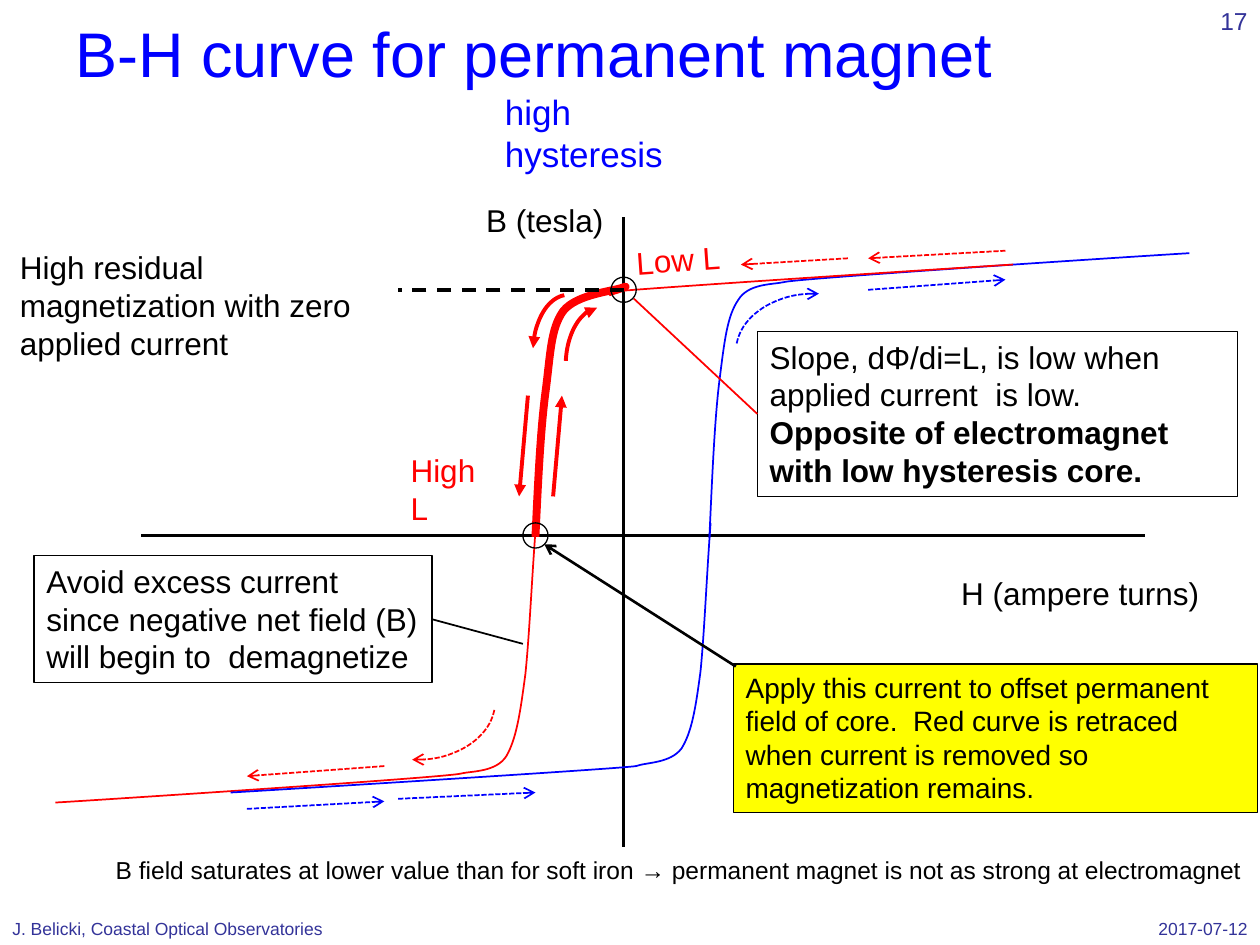
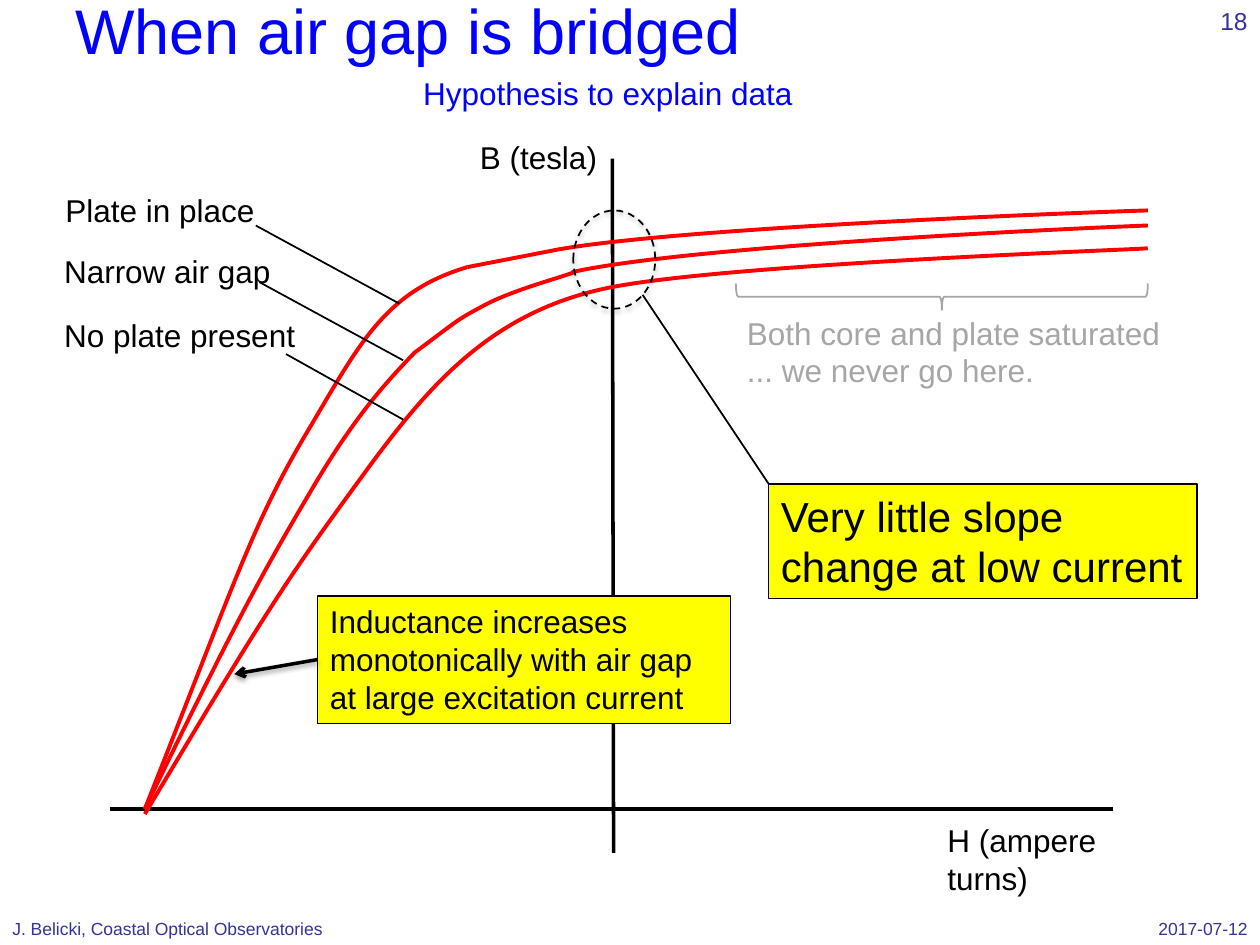
from dataclasses import dataclass

from lxml import etree
from pptx import Presentation
from pptx.dml.color import RGBColor
from pptx.enum.dml import MSO_LINE
from pptx.enum.shapes import MSO_CONNECTOR, MSO_SHAPE
from pptx.enum.text import MSO_ANCHOR, MSO_AUTO_SIZE, PP_ALIGN
from pptx.oxml.ns import qn
from pptx.util import Pt

PX = 9144  # EMU per px, 100 px to the inch
DASH, FINE_DASH = MSO_LINE.DASH, MSO_LINE.SQUARE_DOT
STRAIGHT = MSO_CONNECTOR.STRAIGHT
RECT, OVAL, ARC, BRACE = (MSO_SHAPE.RECTANGLE, MSO_SHAPE.OVAL, MSO_SHAPE.ARC,
                          MSO_SHAPE.RIGHT_BRACE)
LEFT, RIGHT = PP_ALIGN.LEFT, PP_ALIGN.RIGHT
TOP, MIDDLE = MSO_ANCHOR.TOP, MSO_ANCHOR.MIDDLE
LEFT_SIDE, RIGHT_SIDE = 1, 3


@dataclass(frozen=True)
class Theme:
    font: str = "Arial"
    black: str = "000000"
    white: str = "FFFFFF"
    red: str = "FF0000"
    blue: str = "0000FF"
    navy: str = "333399"
    grey: str = "A6A6A6"
    yellow: str = "FFFF00"
    title: int = 36
    callout: int = 24
    subtitle: int = 20
    body: int = 18
    compact: int = 16
    note: int = 14
    footer: int = 10


T = Theme()


def stroke(shape, color, width, dash=None, head=None, tail=None, shadow=False):
    """Style an outline, its arrowheads and its shadow."""
    shape.line.color.rgb = RGBColor.from_string(color)
    shape.line.width = Pt(width)
    if dash:
        shape.line.dash_style = dash
    properties = shape.element.spPr
    outline = properties.find(qn("a:ln"))
    for end, kind in (("a:headEnd", head), ("a:tailEnd", tail)):
        if kind:
            etree.SubElement(outline, qn(end), type=kind)
    effects = etree.SubElement(properties, qn("a:effectLst"))
    if shadow:
        cast = etree.SubElement(effects, qn("a:outerShdw"), blurRad="39370",
                                dist="20320", dir="5400000", rotWithShape="0")
        tint = etree.SubElement(cast, qn("a:srgbClr"), val=T.black)
        etree.SubElement(tint, qn("a:alpha"), val="37000")


def write(slide, at, text, size=T.body, color=T.black, align=LEFT, anchor=TOP,
          grow=True, framed=False, fill=None):
    """Place text, in a framed rectangle if asked; return its shape."""
    frame = [value * PX for value in at]
    if framed:
        shape = slide.shapes.add_shape(RECT, *frame)
        stroke(shape, T.black, 0.75)
    else:
        shape = slide.shapes.add_textbox(*frame)
    if fill:
        shape.fill.solid()
        shape.fill.fore_color.rgb = RGBColor.from_string(fill)
    else:
        shape.fill.background()
    body = shape.text_frame
    body.word_wrap = True
    body.auto_size = MSO_AUTO_SIZE.SHAPE_TO_FIT_TEXT if grow else MSO_AUTO_SIZE.NONE
    body.vertical_anchor = anchor
    paragraph = body.paragraphs[0]
    paragraph.text = text
    paragraph.alignment = align
    paragraph.font.name = T.font
    paragraph.font.size = Pt(size)
    paragraph.font.color.rgb = RGBColor.from_string(color)
    return shape


prs = Presentation()
prs.slide_width, prs.slide_height = 1000 * PX, 750 * PX
magnet, gap = (prs.slides.add_slide(prs.slide_layouts[6]) for _ in range(2))

# Titles and footers
for slide, number, title, title_at in (
    (magnet, "17", "B-H curve for permanent magnet", (50, -2, 900, 87)),
    (gap, "18", "When air gap is bridged", (50, -15, 900, 77)),
):
    write(slide, title_at, title, T.title, T.blue, anchor=MIDDLE, grow=False)
    write(slide, (777, 724, 223, 25), "2017-07-12", T.footer, T.navy, RIGHT, grow=False)
    write(slide, (0, 724, 317, 25), "J. Belicki, Coastal Optical Observatories",
          T.footer, T.navy, grow=False)
    write(slide, (792, 0, 208, 42), number, T.note, T.navy, RIGHT, grow=False)

# Axes
for slide, start, end in (
    (magnet, (112, 425), (909, 425)),
    (magnet, (495, 672), (495, 172)),
    (gap, (87, 642), (883, 642)),
    (gap, (487, 677), (486, 126)),
):
    axis = slide.shapes.add_connector(STRAIGHT, *[v * PX for v in start + end])
    stroke(axis, T.black, 2)

# Magnetization curves: a start point, then two controls and an end per Bezier piece
for slide, color, width, start, points in (
    (magnet, T.red, 4.5, (483, 232), [
        (484, 232), (502, 226), (495, 228), (489, 231), (458, 233), (447, 247),
        (437, 261), (437, 281), (433, 311), (429, 341), (427, 384), (425, 426)]),
    (magnet, T.blue, 1, (944, 201), [
        (941, 201), (630, 221), (622, 224), (613, 226), (594, 225), (586, 238),
        (577, 251), (575, 271), (571, 302), (567, 334), (565, 385), (563, 427)]),
    (magnet, T.red, 1, (44, 637), [
        (47, 637), (357, 617), (366, 614), (374, 612), (394, 613), (402, 600),
        (410, 586), (413, 565), (417, 535), (420, 506), (422, 462), (425, 421)]),
    (magnet, T.blue, 1, (183, 629), [
        (185, 629), (496, 610), (505, 608), (513, 605), (532, 606), (541, 594),
        (549, 581), (552, 563), (556, 533), (559, 503), (561, 455), (564, 415)]),
    (magnet, T.red, 1, (804, 210), [
        (802, 210), (491, 230), (482, 232), (474, 235), (455, 234), (446, 247),
        (438, 260), (435, 281), (432, 311), (428, 341), (426, 384), (423, 426)]),
    (gap, T.red, 2.25, (911, 197), [
        (907, 198), (582, 209), (485, 228), (389, 247), (339, 307), (286, 380),
        (232, 454), (217, 475), (115, 646)]),
    (gap, T.red, 2.25, (456, 216), [
        (443, 221), (408, 230), (385, 242), (361, 255), (368, 251), (329, 280),
        (306, 304), (281, 331), (246, 391), (210, 452), (187, 493), (115, 642)]),
    (gap, T.red, 2.25, (911, 179), [(907, 179), (558, 193), (454, 216)]),
    (gap, T.red, 2.25, (911, 167), [(907, 167), (550, 179), (443, 198)]),
    (gap, T.red, 2.25, (371, 212), [
        (304, 232), (285, 274), (242, 346), (200, 417), (185, 466), (115, 642)]),
):
    outline = slide.shapes.build_freeform(start[0] * PX, start[1] * PX)
    outline.add_line_segments([(x * PX, y * PX) for x, y in points], close=False)
    curve = outline.convert_to_shape()
    legs = list(curve.element.iter(qn("a:lnTo")))
    for first in range(0, len(legs), 3):
        bezier = etree.SubElement(legs[first].getparent(), qn("a:cubicBezTo"))
        for leg in legs[first:first + 3]:
            bezier.append(leg[0])
            leg.getparent().remove(leg)
    curve.fill.background()
    stroke(curve, color, width)

# Labels
for slide, at, text, size, color in (
    (magnet, (391, 67, 196, 44), "high hysteresis", T.subtitle, T.blue),
    (magnet, (376, 155, 208, 40), "B (tesla)", T.body, T.black),
    (magnet, (753, 451, 247, 40), "H (ampere turns)", T.body, T.black),
    (magnet, (316, 353, 91, 40), "High L", T.body, T.red),
    (magnet, (6, 192, 310, 71),
     "High residual magnetization with zero applied current", T.body, T.black),
    (magnet, (82, 674, 918, 34),
     "B field saturates at lower value than for soft iron → "
     "permanent magnet is not as strong at electromagnet", T.note, T.black),
    (gap, (326, 54, 323, 40), "Hypothesis to explain data", T.body, T.blue),
    (gap, (371, 105, 208, 40), "B (tesla)", T.body, T.black),
    (gap, (742, 647, 208, 40), "H (ampere turns)", T.body, T.black),
    (gap, (42, 147, 275, 40), "Plate in place", T.body, T.black),
    (gap, (41, 195, 275, 40), "Narrow air gap", T.body, T.black),
    (gap, (41, 246, 275, 40), "No plate present", T.body, T.black),
    (gap, (583, 244, 353, 71),
     "Both core and plate saturated ... we never go here.", T.body, T.grey),
):
    write(slide, at, text, size, color)
low_l = write(magnet, (495, 186, 91, 40), "Low L", color=T.red)
low_l.rotation = 355.9

# Framed callouts
slope = write(magnet, (601, 263, 381, 131),
              "Slope, dΦ/di=L, is low when applied current  is low.  ", framed=True)
opposite = slope.text_frame.paragraphs[0].add_run()
opposite.text = "Opposite of electromagnet with low hysteresis core."
opposite.font.bold = True
avoid = write(magnet, (27, 441, 316, 101),
              "Avoid excess current since negative net field (B) will begin to  demagnetize",
              framed=True, fill=T.white)
write(magnet, (582, 527, 416, 118),
      "Apply this current to offset permanent field of core.  Red curve is retraced "
      "when current is removed so magnetization remains.",
      T.compact, framed=True, fill=T.yellow)
inductance = write(gap, (252, 473, 328, 101),
                   "Inductance increases monotonically with air gap at large "
                   "excitation current", framed=True, fill=T.yellow)
write(gap, (610, 384, 340, 91), "Very little slope change at low current",
      T.callout, framed=True, fill=T.yellow)

# Straight lines and arrows; a joined one starts at the side of a callout
red_sweep = dict(color=T.red, width=1, dash=FINE_DASH, tail="arrow")
blue_sweep = dict(red_sweep, color=T.blue)
retrace = dict(color=T.red, width=2.25)
pointer = dict(color=T.black, width=1)
for slide, start, end, style, joined in (
    (magnet, (495, 230), (316, 230), dict(color=T.black, width=2, dash=DASH), None),
    (magnet, (601, 329), (503, 237), dict(color=T.red, width=1), (slope, LEFT_SIDE)),
    (magnet, (343, 492), (415, 511), pointer, (avoid, RIGHT_SIDE)),
    (magnet, (584, 529), (432, 432), dict(color=T.black, width=1.5, tail="arrow"), None),
    (magnet, (316, 634), (425, 629), blue_sweep, None),
    (magnet, (196, 642), (305, 636), blue_sweep, None),
    (magnet, (689, 230), (798, 222), blue_sweep, None),
    (magnet, (673, 205), (588, 210), red_sweep, None),
    (magnet, (798, 199), (689, 205), red_sweep, None),
    (magnet, (305, 608), (196, 616), red_sweep, None),
    (magnet, (446, 314), (439, 394), dict(retrace, head="triangle"), None),
    (magnet, (419, 314), (412, 394), dict(retrace, tail="triangle"), None),
    (gap, (443, 198), (371, 212), retrace, None),
    (gap, (252, 523), (186, 535),
     dict(color=T.black, width=2, tail="arrow", shadow=True), (inductance, LEFT_SIDE)),
    (gap, (203, 179), (317, 241), pointer, None),
    (gap, (206, 224), (320, 286), pointer, None),
    (gap, (227, 281), (320, 333), pointer, None),
    (gap, (510, 234), (610, 384), pointer, None),
):
    line = slide.shapes.add_connector(STRAIGHT, *[v * PX for v in start + end])
    if joined:
        line.begin_connect(*joined)
    stroke(line, **style)

# Bent arrows, angles in degrees
for at, rotation, angles, style in (
    ((268, 511, 125, 92), 0, (5.94, 94.22), red_sweep),
    ((584, 233, 125, 92), 180, (5.94, 94.22), blue_sweep),
    ((449, 244, 56, 92), 0, (187.38, 266.13), dict(retrace, tail="triangle")),
    ((423, 234, 56, 92), 0, (187.38, 266.13), dict(retrace, head="triangle")),
):
    bend = magnet.shapes.add_shape(ARC, *[v * PX for v in at])
    for index, angle in enumerate(angles):
        bend.adjustments[index] = angle * 0.6
    bend.rotation = rotation
    bend.fill.background()
    stroke(bend, **style)

# Operating points and the saturated range
for slide, kind, at, rotation, style in (
    (magnet, OVAL, (415, 415, 20, 20), 0, dict(color=T.black, width=0.75)),
    (magnet, OVAL, (485, 220, 20, 20), 0, dict(color=T.black, width=0.75)),
    (gap, OVAL, (455, 167, 65, 78), 0, dict(pointer, dash=DASH, shadow=True)),
    (gap, BRACE, (737, 72, 21, 327), 90, dict(color=T.grey, width=1)),
):
    marker = slide.shapes.add_shape(kind, *[v * PX for v in at])
    marker.rotation = rotation
    marker.fill.background()
    stroke(marker, **style)

prs.save("out.pptx")
